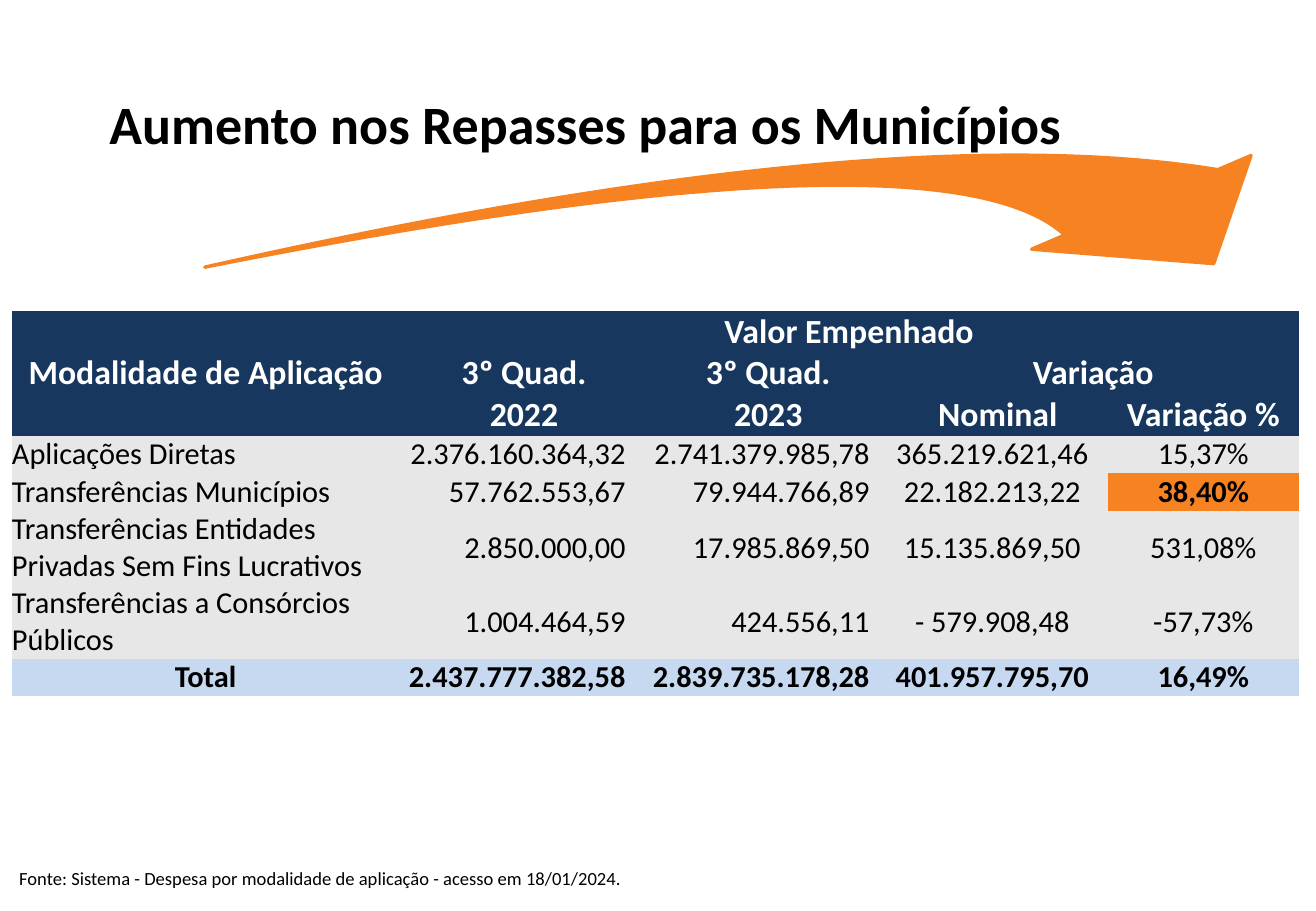
import dataclasses

import pptx
import pptx.dml.color
import pptx.enum.shapes
import pptx.enum.text
import pptx.util

Cm = pptx.util.Cm
Pt = pptx.util.Pt
ALIGN = pptx.enum.text.PP_ALIGN


@dataclasses.dataclass(frozen=True)
class Theme:
    font: str = "Calibri"
    navy: str = "17375E"
    orange: str = "F68222"
    gray: str = "E7E7E7"
    light_blue: str = "C6D9F1"
    white: str = "FFFFFF"
    black: str = "000000"
    title_size: int = 32
    header_size: int = 20
    body_size: int = 18
    source_size: int = 11


theme = Theme()


def add_text(paragraph, text, size, color, bold=False, align=ALIGN.LEFT):
    paragraph.alignment = align
    run = paragraph.add_run()
    run.text = text
    run.font.name = theme.font
    run.font.size = Pt(size)
    run.font.bold = bold
    run.font.color.rgb = pptx.dml.color.RGBColor.from_string(color)


def fill_cell(cell, text, fill, size, color, bold, align=ALIGN.CENTER, right=0.0):
    cell.fill.solid()
    cell.fill.fore_color.rgb = pptx.dml.color.RGBColor.from_string(fill)
    cell.vertical_anchor = pptx.enum.text.MSO_ANCHOR.MIDDLE
    cell.margin_left = cell.margin_top = cell.margin_bottom = 0
    cell.margin_right = Cm(right)
    for index, line in enumerate(text.split("\n")):
        frame = cell.text_frame
        paragraph = frame.add_paragraph() if index else frame.paragraphs[0]
        add_text(paragraph, line, size, color, bold, align)


presentation = pptx.Presentation()
presentation.slide_width = Cm(27.51)
presentation.slide_height = Cm(19.05)
slide = presentation.slides.add_slide(presentation.slide_layouts[6])

# Rising arrow
arrow = slide.shapes.add_shape(
    pptx.enum.shapes.MSO_SHAPE.SWOOSH_ARROW, Cm(12.5), Cm(-5.46), Cm(5.99), Cm(21.62)
)
arrow.rotation = 73.3
arrow.adjustments[0] = 0.16
arrow.adjustments[1] = 0.31
arrow.shadow.inherit = False
arrow.fill.solid()
arrow.fill.fore_color.rgb = pptx.dml.color.RGBColor.from_string(theme.orange)
arrow.line.color.rgb = pptx.dml.color.RGBColor.from_string(theme.orange)
arrow.line.width = Pt(2)

# Table grid, with the plain style that has no borders
column_widths = [8.1, 5.21, 5.0, 4.6, 3.99]
row_heights = [0.87, 0.87, 0.87, 0.79, 0.77, 1.54, 1.54, 0.78]
frame = slide.shapes.add_table(
    len(row_heights), len(column_widths), Cm(0.25), Cm(6.5),
    Cm(sum(column_widths)), Cm(sum(row_heights)),
)
table = frame.table
table.first_row = False
table.horz_banding = False
table._tbl.tblPr[0].text = "{2D5ABB26-0587-4C30-8999-92F81FD0307C}"
for column, width in zip(table.columns, column_widths):
    column.width = Cm(width)
for row, height in zip(table.rows, row_heights):
    row.height = Cm(height)

# Table header: text, first row and column, last row and column
headers = [
    ("Modalidade de Aplicação", 0, 0, 2, 0),
    ("Valor Empenhado", 0, 1, 0, 4),
    ("3º Quad.\n2022", 1, 1, 2, 1),
    ("3º Quad.\n2023", 1, 2, 2, 2),
    ("Variação", 1, 3, 1, 4),
    ("Nominal", 2, 3, 2, 3),
    ("Variação %", 2, 4, 2, 4),
]
for text, top, left, bottom, right in headers:
    cell = table.cell(top, left)
    if (top, left) != (bottom, right):
        cell.merge(table.cell(bottom, right))
    fill_cell(cell, text, theme.navy, theme.header_size, theme.white, True)

# Table body
records = [
    ("Aplicações Diretas", "2.376.160.364,32", "2.741.379.985,78", "365.219.621,46", "15,37%"),
    ("Transferências Municípios", "57.762.553,67", "79.944.766,89", "22.182.213,22", "38,40%"),
    ("Transferências Entidades Privadas Sem Fins Lucrativos",
     "2.850.000,00", "17.985.869,50", "15.135.869,50", "531,08%"),
    ("Transferências a Consórcios Públicos",
     "1.004.464,59", "424.556,11", "- 579.908,48", "-57,73%"),
    ("Total", "2.437.777.382,58", "2.839.735.178,28", "401.957.795,70", "16,49%"),
]
column_aligns = [ALIGN.LEFT, ALIGN.RIGHT, ALIGN.RIGHT, ALIGN.CENTER, ALIGN.CENTER]
right_margins = [0, 0.48, 0.38, 0.23, 0]
for row_index, record in enumerate(records, start=3):
    is_total = record[0] == "Total"
    for column_index, text in enumerate(record):
        is_highlight = text == "38,40%"
        fill = theme.light_blue if is_total else theme.orange if is_highlight else theme.gray
        align = ALIGN.CENTER if text == "Total" else column_aligns[column_index]
        fill_cell(
            table.cell(row_index, column_index), text, fill, theme.body_size,
            theme.black, is_total or is_highlight, align, right_margins[column_index],
        )

# Source note
source = slide.shapes.add_textbox(Cm(0.15), Cm(18.01), Cm(25.96), Cm(0.74))
source.text_frame.word_wrap = True
add_text(
    source.text_frame.paragraphs[0],
    "Fonte: Sistema - Despesa por modalidade de aplicação - acesso em 18/01/2024.",
    theme.source_size, theme.black,
)

# Title
title = slide.shapes.add_textbox(Cm(1.96), Cm(1.93), Cm(20.57), Cm(1.5))
title.text_frame.word_wrap = False
title_paragraph = title.text_frame.paragraphs[0]
title_paragraph.line_spacing = 0.9
add_text(
    title_paragraph, "Aumento nos Repasses para os Municípios",
    theme.title_size, theme.black, True, ALIGN.CENTER,
)

presentation.save("out.pptx")
